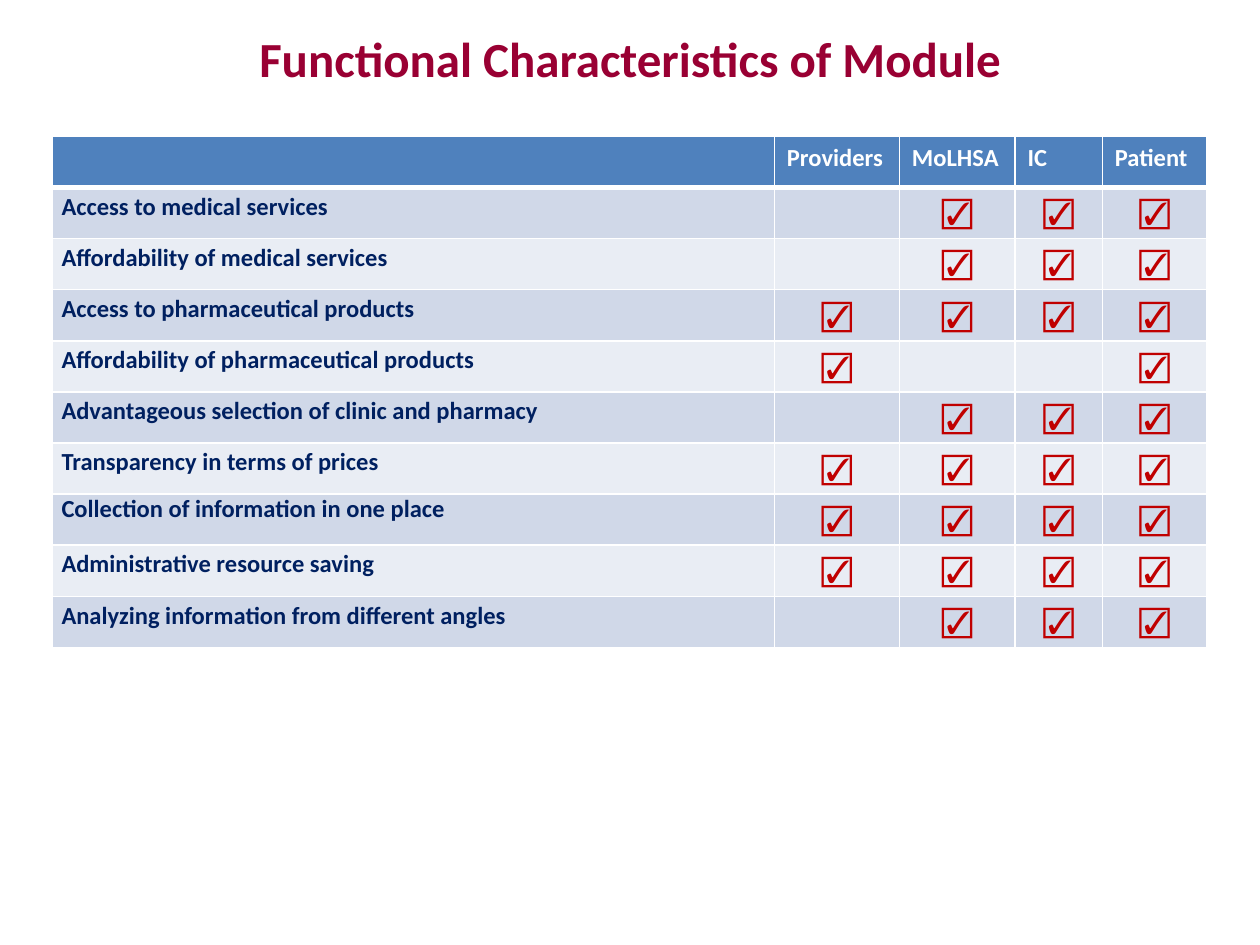
from lxml import etree
from pptx import Presentation
from pptx.dml.color import RGBColor
from pptx.enum.text import MSO_ANCHOR, PP_ALIGN
from pptx.oxml.ns import qn
from pptx.util import Cm, Pt

LEFT, CENTER = PP_ALIGN.LEFT, PP_ALIGN.CENTER
MIDDLE = MSO_ANCHOR.MIDDLE

# Content
TITLE = "Functional Characteristics of Module"
HEADER = ["", "Providers", "MoLHSA", "IC", "Patient"]
CHECK = "☑"
# Feature, then one flag per group: providers, MoLHSA, IC, patient
FEATURES = [
    ("Access to medical services", (0, 1, 1, 1)),
    ("Affordability of medical services", (0, 1, 1, 1)),
    ("Access to pharmaceutical products", (1, 1, 1, 1)),
    ("Affordability of pharmaceutical products", (1, 0, 0, 1)),
    ("Advantageous selection of clinic and pharmacy", (0, 1, 1, 1)),
    ("Transparency in terms of prices", (1, 1, 1, 1)),
    ("Collection of information in one place", (1, 1, 1, 1)),
    ("Administrative resource saving", (1, 1, 1, 1)),
    ("Analyzing information from different angles", (0, 1, 1, 1)),
]
TIGHT_FEATURE = "Collection of information in one place"

# Look
COLORS = {
    "title": "990033", "header": "4F81BD", "white": "FFFFFF",
    "feature": "002060", "check": "C00000",
    "band_dark": "D0D8E8", "band_light": "E9EDF4",
}
COL_WIDTHS = [14.55, 2.52, 2.33, 1.76, 2.11]
ROW_HEIGHT = 1.03


def add_text(tf, text, size=14, color="white", bold=True, align=LEFT,
             before=None, spacing=None):
    p = tf.paragraphs[0]
    p.alignment = align
    if before is not None:
        p.space_before = Pt(before)
    if spacing is not None:
        p.line_spacing = spacing
    r = p.add_run()
    r.text = text
    r.font.name = "Calibri"
    r.font.size = Pt(size)
    r.font.bold = bold
    r.font.color.rgb = RGBColor.from_string(COLORS[color])


def style_cell(cell, fill, top=1, bottom=1):
    tcPr = cell._tc.get_or_add_tcPr()
    for side, width in (("L", 1), ("R", 1), ("T", top), ("B", bottom)):
        ln = etree.SubElement(tcPr, qn(f"a:ln{side}"), w=str(Pt(width)))
        solid = etree.SubElement(ln, qn("a:solidFill"))
        etree.SubElement(solid, qn("a:srgbClr"), val=COLORS["white"])
    cell.fill.solid()
    cell.fill.fore_color.rgb = RGBColor.from_string(COLORS[fill])


prs = Presentation()
prs.slide_width, prs.slide_height = Cm(25.4), Cm(19.05)
s = prs.slides.add_slide(prs.slide_layouts[6])

# Title
tf = s.shapes.add_textbox(0, Cm(-0.43), prs.slide_width, Cm(3.18)).text_frame
tf.word_wrap = True
tf.vertical_anchor = MIDDLE
add_text(tf, TITLE, size=28, color="title", align=CENTER)

# Table grid
n_rows = len(FEATURES) + 1
table = s.shapes.add_table(n_rows, len(HEADER), Cm(1.06), Cm(2.75),
                           Cm(sum(COL_WIDTHS)), Cm(ROW_HEIGHT * n_rows)).table
for col, width in zip(table.columns, COL_WIDTHS):
    col.width = Cm(width)
for row in table.rows:
    row.height = Cm(ROW_HEIGHT)

# Header row
for c, label in enumerate(HEADER):
    cell = table.cell(0, c)
    style_cell(cell, "header", bottom=3)
    if label:
        add_text(cell.text_frame, label)

# Feature rows
for i, (feature, flags) in enumerate(FEATURES, start=1):
    for c in range(len(HEADER)):
        style_cell(table.cell(i, c), "band_dark" if i % 2 else "band_light",
                   top=3 if i == 1 else 1)
    cell = table.cell(i, 0)
    cell.margin_left = cell.margin_right = Cm(0.18)
    cell.margin_top = cell.margin_bottom = 0
    tight = feature == TIGHT_FEATURE
    add_text(cell.text_frame, feature, color="feature",
             before=6 if tight else 12, spacing=None if tight else 1.15)
    for c, flag in enumerate(flags, start=1):
        if flag:
            add_text(table.cell(i, c).text_frame, CHECK, size=18,
                     color="check", bold=False, align=CENTER)

prs.save("out.pptx")
